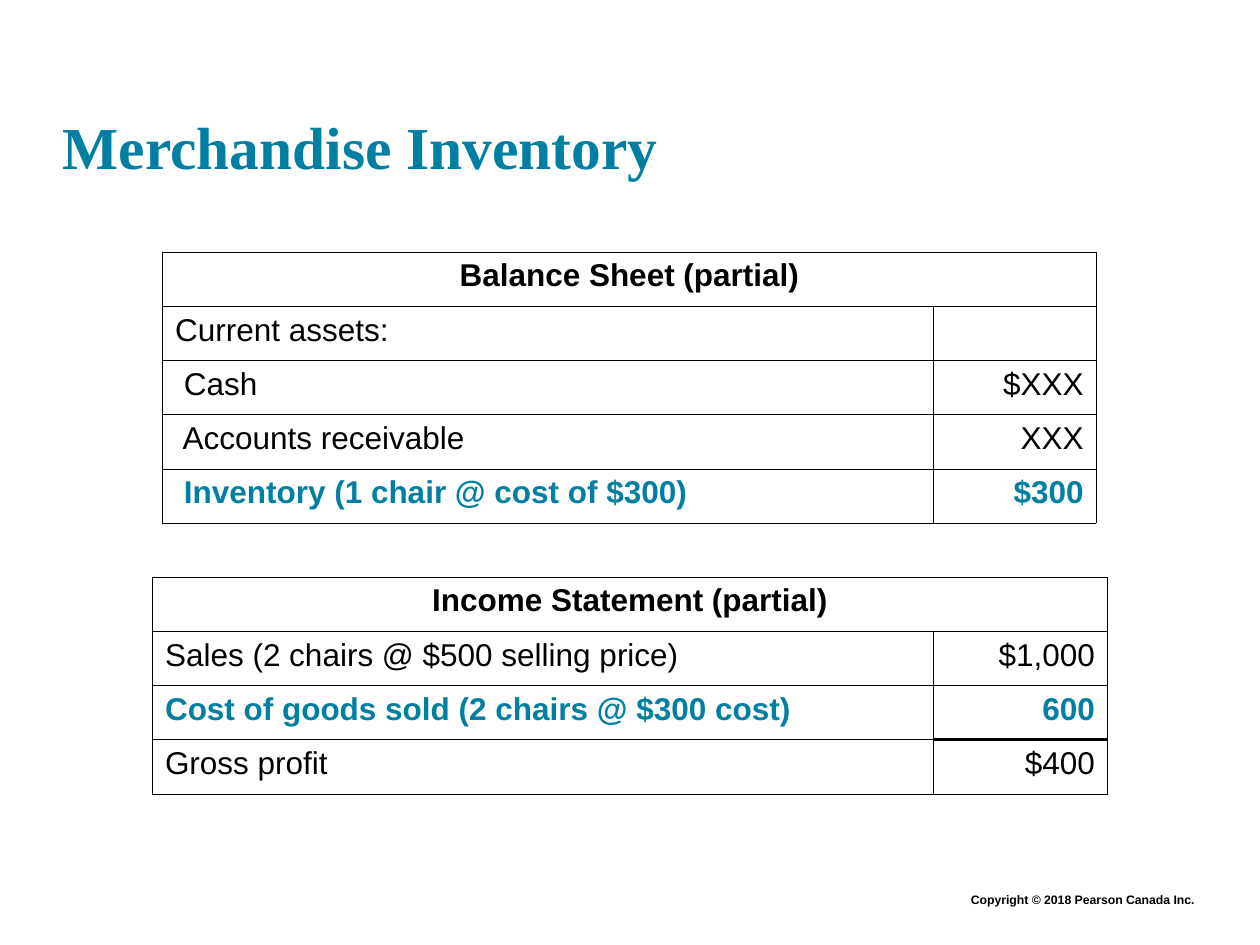
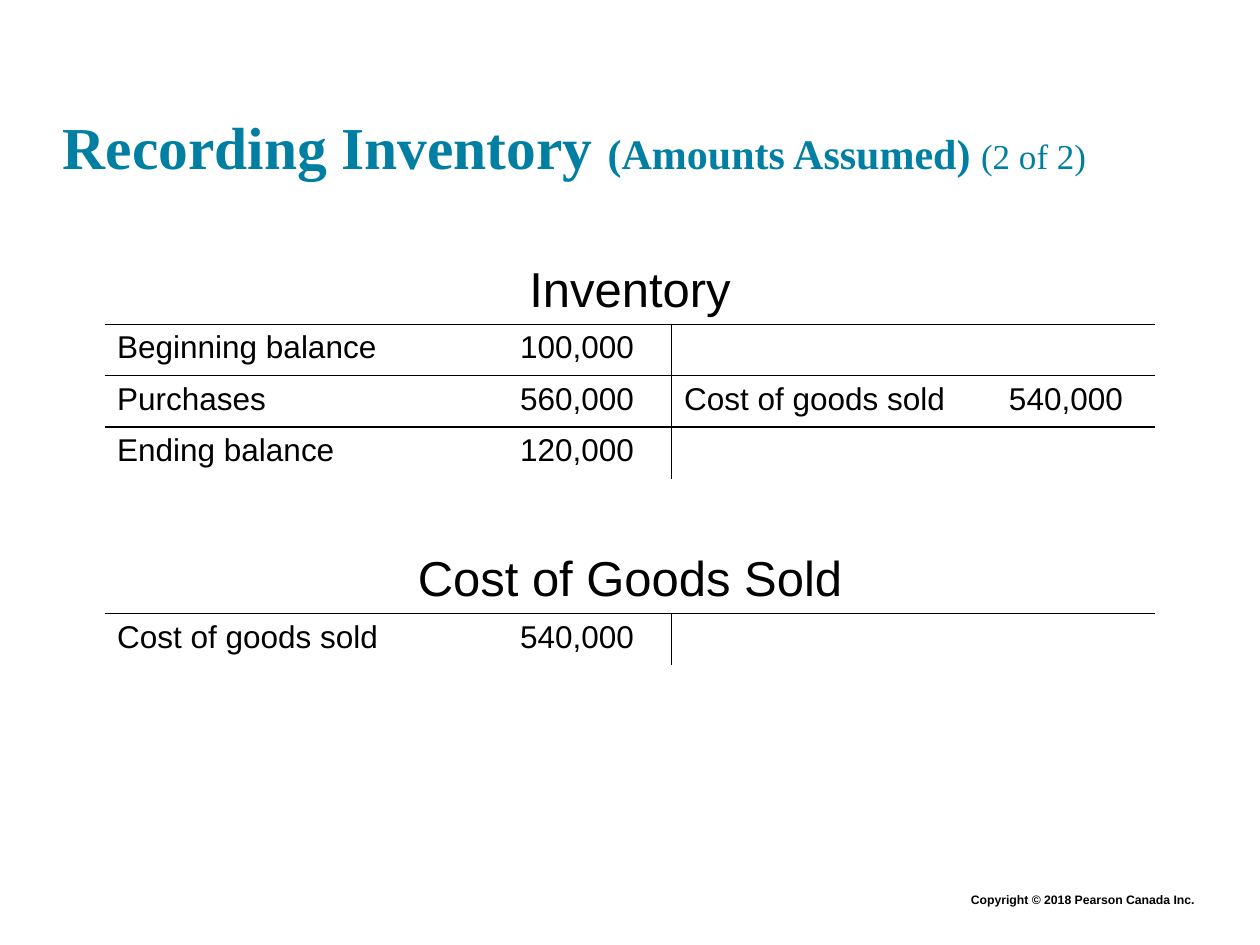
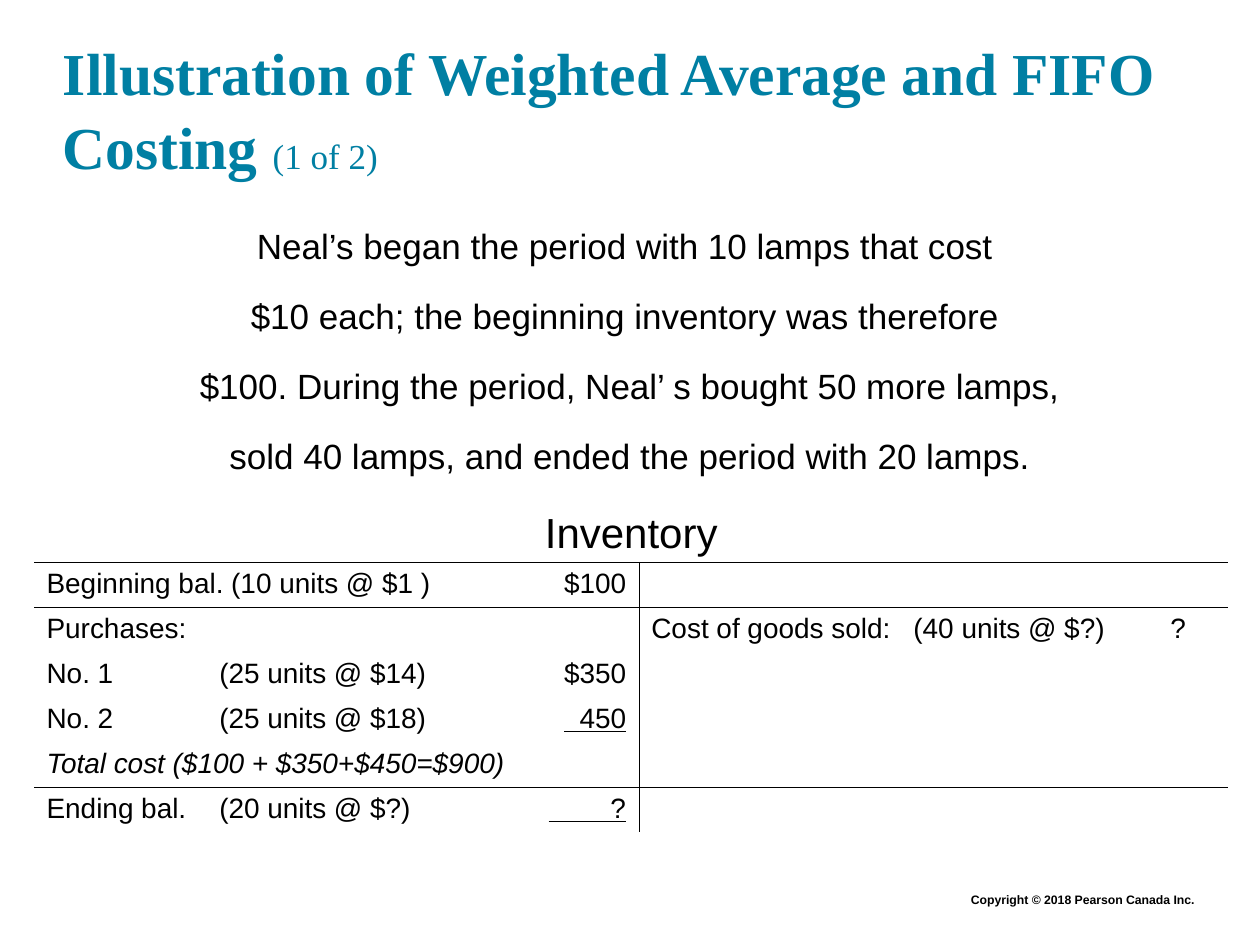
from pptx import Presentation
from pptx.dml.color import RGBColor
from pptx.enum import text as t
from pptx.oxml import ns
from pptx.util import Inches, Pt
from lxml import etree

TEAL = RGBColor(0x00, 0x7F, 0xA3)
BLACK = RGBColor(0, 0, 0)
SANS, SERIF = "Arial", "Times New Roman"
LEFT, CENTER, RIGHT = t.PP_ALIGN.LEFT, t.PP_ALIGN.CENTER, t.PP_ALIGN.RIGHT
WIDTH, HEIGHT = 10, 7.5
HAIR, THIN, HEAVY = 0.25, 1, 2.25
COPYRIGHT = "Copyright © 2018 Pearson Canada Inc."
ENTRY_TABS = {0: 1.37, 2: 2.08}

HIGHLIGHT = dict(bold=True, color=TEAL)
HEADING = dict(size=34, bold=True, color=TEAL, font=SERIF)
SUBHEADING = {**HEADING, "size": 24}
COUNTER = {**HEADING, "size": 20, "bold": False}

# A row is its cells, then optionally the format of the whole row.
# Rules map a row boundary to a line weight, or a column boundary to a weight.
STATEMENT = dict(size=18, aligns=[LEFT, RIGHT], title_format=dict(size=18, bold=True),
                 col_rules={0: HAIR, 1: HAIR, 2: HAIR})
ACCOUNT = dict(size=18, left=0.83, cols=[3, 1.5, 2.42, 1.42], title_height=0.57, row_height=0.41,
               aligns=[LEFT, CENTER, LEFT, CENTER], title_format=dict(size=28),
               col_rules={2: HAIR})

SLIDES = [
    dict(
        title=[("Merchandise Inventory", HEADING)],
        tables=[
            dict(STATEMENT, title="Balance Sheet (partial)", left=1.29, top=2, cols=[6.12, 1.29],
                 title_height=0.43, row_height=0.43,
                 row_rules=dict.fromkeys(range(6), HAIR),
                 rows=[
                     (["Current assets:", ""],),
                     (["Cash", "$XXX"], dict(indent=0.07)),
                     (["Accounts receivable", "XXX"], dict(indent=0.06)),
                     (["Inventory (1 chair @ cost of $300)", "$300"],
                      dict(HIGHLIGHT, indent=0.07)),
                 ]),
            dict(STATEMENT, title="Income Statement (partial)", left=1.21, top=4.58,
                 cols=[6.2, 1.38], title_height=0.43, row_height=0.43,
                 row_rules=dict.fromkeys(range(5), HAIR), subtotal_rule=(3, 1),
                 rows=[
                     (["Sales (2 chairs @ $500 selling price)", "$1,000"],),
                     (["Cost of goods sold (2 chairs @ $300 cost)", "600"], HIGHLIGHT),
                     (["Gross profit", "$400"],),
                 ]),
        ]),
    dict(
        title=[("Recording Inventory ", HEADING), ("(Amounts Assumed) ", SUBHEADING),
               ("(2 of 2)", COUNTER)],
        tables=[
            dict(ACCOUNT, title="Inventory", top=2, row_rules={1: HAIR, 2: HAIR, 3: THIN},
                 rows=[
                     (["Beginning balance", "100,000", "", ""],),
                     (["Purchases", "560,000", "Cost of goods sold", "540,000"],),
                     (["Ending balance", "120,000", "", ""],),
                 ]),
            dict(ACCOUNT, title="Cost of Goods Sold", top=4.3, row_rules={1: HAIR},
                 rows=[(["Cost of goods sold", "540,000", "", ""],)]),
        ]),
    dict(
        title=[("Illustration of Weighted Average and FIFO Costing ", HEADING),
               ("(1 of 2)", COUNTER)],
        story=["Neal’s began the period with 10 lamps that cost ",
               "$10 each; the beginning inventory was therefore ",
               "$100. During the period, Neal’ s bought 50 more lamps,",
               "sold 40 lamps, and ended the period with 20 lamps."],
        tables=[
            dict(ACCOUNT, title="Inventory", size=16, left=0.27, top=3.97,
                 cols=[3.91, 0.89, 3.88, 0.8], title_height=0.47, row_height=0.35,
                 bottom_margin=0.04, aligns=[LEFT, RIGHT, LEFT, CENTER],
                 title_format=dict(size=24), row_rules={1: HAIR, 2: HAIR, 6: HAIR},
                 rows=[
                     (["Beginning bal. (10 units @ $1 )", "$100", "", ""],),
                     (["Purchases:", "", "Cost of goods sold:\t(40 units @ $?)", "?"],),
                     (["No. 1\t(25 units @ $14)", "$350", "", ""],),
                     (["No. 2\t(25 units @ $18)", ("  450", dict(underline=True)), "", ""],),
                     (["Total cost ($100 + $350+$450=$900)", "", "", ""], dict(italic=True)),
                     (["Ending bal.\t(20 units @ $?)", ("        ?", dict(underline=True)),
                       "", ""],),
                 ]),
        ]),
]


def write(paragraph, words, size=18, color=BLACK, font=SANS, bold=False, italic=False,
          underline=False, align=None, tab=None):
    """Append one formatted run; with no words, size the empty line."""
    if align is not None:
        paragraph.alignment = align
    if tab:
        stops = etree.SubElement(paragraph._p.get_or_add_pPr(), ns.qn("a:tabLst"))
        etree.SubElement(stops, ns.qn("a:tab"), pos=str(Inches(tab)), algn="l")
    if not words:
        etree.SubElement(paragraph._p, ns.qn("a:endParaRPr"), sz=str(size * 100))
        return
    run = paragraph.add_run()
    run.text = words
    style = run.font
    style.name, style.size, style.color.rgb = font, Pt(size), color
    style.bold, style.italic, style.underline = bold, italic, underline


def add_frame(slide, left, top, width, height, anchor=t.MSO_ANCHOR.TOP):
    frame = slide.shapes.add_textbox(*map(Inches, (left, top, width, height))).text_frame
    frame.word_wrap = True
    frame.vertical_anchor = anchor
    frame.margin_left = frame.margin_right = frame.margin_top = frame.margin_bottom = 0
    return frame


def set_borders(cell, **weights):
    """Draw the sides L, R, T and B in points; None leaves a side bare."""
    properties = cell._tc.get_or_add_tcPr()
    for side, weight in weights.items():
        line = etree.SubElement(properties, ns.qn(f"a:ln{side}"), w=str(Pt(weight or 0)))
        if weight:
            fill = etree.SubElement(line, ns.qn("a:solidFill"))
            etree.SubElement(fill, ns.qn("a:srgbClr"), val=str(BLACK))
        else:
            etree.SubElement(line, ns.qn("a:noFill"))


def add_ledger(slide, title, rows, left, top, cols, title_height, row_height, aligns, size,
               title_format, row_rules, col_rules, subtotal_rule=None, bottom_margin=0.05):
    heights = [title_height] + [row_height] * len(rows)
    last = len(cols)
    table = slide.shapes.add_table(
        len(heights), last, *map(Inches, (left, top, sum(cols), sum(heights)))).table
    table.first_row = table.horz_banding = False
    for column, width in zip(table.columns, cols):
        column.width = Inches(width)
    for row, height in zip(table.rows, heights):
        row.height = Inches(height)

    def row_rule(boundary, c):
        return HEAVY if (boundary, c) == subtotal_rule else row_rules.get(boundary)

    table.cell(0, 0).merge(table.cell(0, last - 1))
    for r in range(len(heights)):
        for c in range(last):
            cell = table.cell(r, c)
            sides = (c, c + 1) if r else (0, last)
            set_borders(cell, L=col_rules.get(sides[0]), R=col_rules.get(sides[1]),
                        T=row_rule(r, c), B=row_rule(r + 1, c))
            cell.fill.background()
            cell.margin_bottom = Inches(bottom_margin)

    heading = table.cell(0, 0)
    heading.vertical_anchor = t.MSO_ANCHOR.BOTTOM if last > 2 else t.MSO_ANCHOR.TOP
    write(heading.text_frame.paragraphs[0], title, align=CENTER, **title_format)
    for r, (entries, *row_format) in enumerate(rows, 1):
        look = dict(row_format[0]) if row_format else {}
        indent = look.pop("indent", 0)
        for c, entry in enumerate(entries):
            words, extra = entry if isinstance(entry, tuple) else (entry, {})
            cell = table.cell(r, c)
            if c == 0:
                cell.margin_left = Inches(0.1 + indent)
            write(cell.text_frame.paragraphs[0], words, size=size, align=aligns[c],
                  tab=ENTRY_TABS[c] if "\t" in words else None, **look, **extra)


def add_story(slide, lines):
    frame = add_frame(slide, 0.5, 1.78, 0.9 * WIDTH, 2.22)
    for i, line in enumerate(lines):
        paragraph = frame.add_paragraph() if i else frame.paragraphs[0]
        if i:
            paragraph.space_before = Pt(16)
        write(paragraph, line, size=20, align=CENTER)


def main():
    deck = Presentation()
    deck.slide_width, deck.slide_height = Inches(WIDTH), Inches(HEIGHT)
    for content in SLIDES:
        slide = deck.slides.add_slide(deck.slide_layouts[6])
        footer = add_frame(slide, 1.75, 7.08, 7.73, 0.12)
        write(footer.paragraphs[0], COPYRIGHT, size=7, bold=True, align=RIGHT)
        title = add_frame(slide, 0.5, 0.24, 0.9 * WIDTH, 1.2, t.MSO_ANCHOR.BOTTOM).paragraphs[0]
        title.line_spacing = 1.04
        for words, look in content["title"]:
            write(title, words, **look)
        if "story" in content:
            add_story(slide, content["story"])
        for ledger in content["tables"]:
            add_ledger(slide, **ledger)
    deck.save("out.pptx")


if __name__ == "__main__":
    main()
